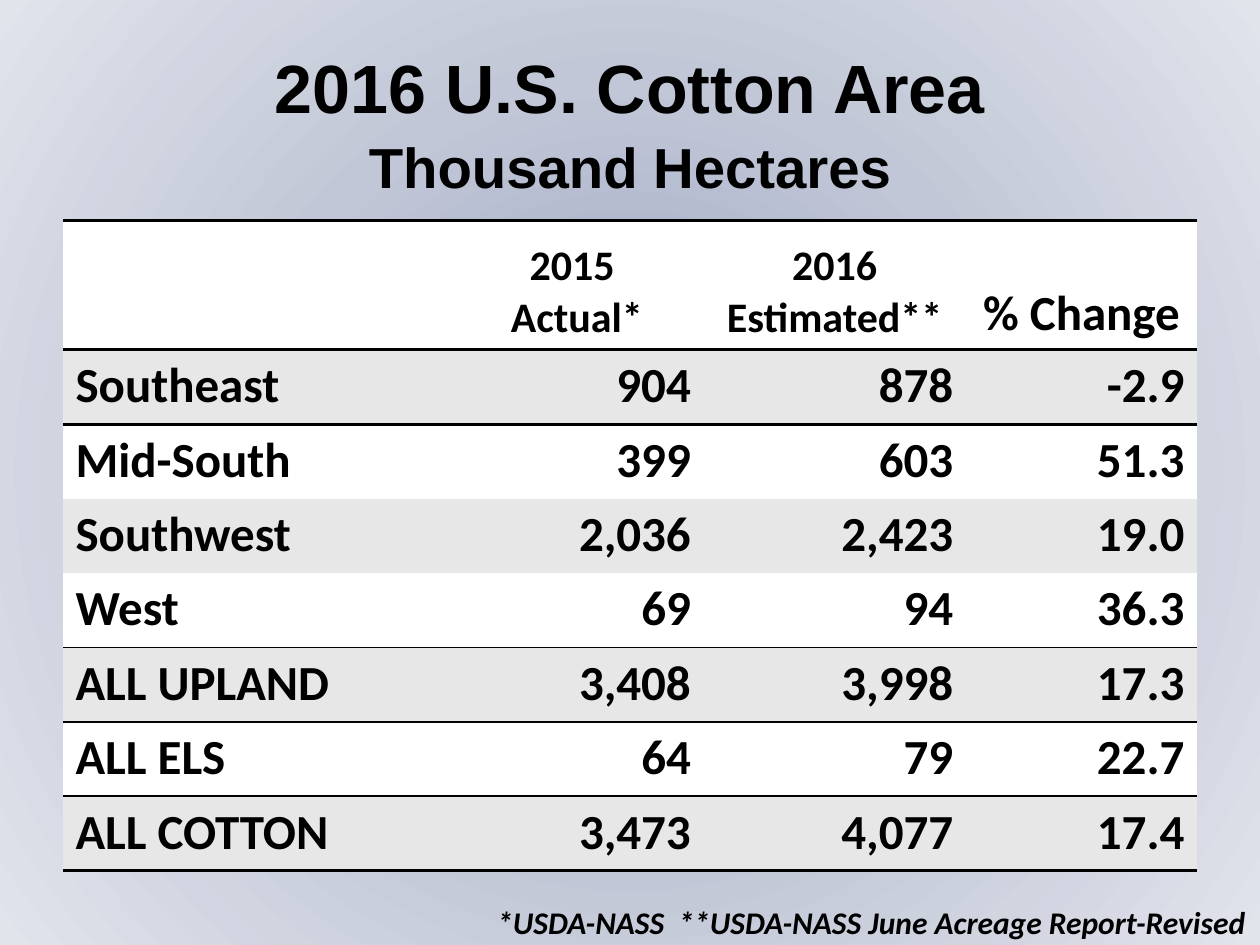
from lxml.etree import SubElement
from pptx import Presentation
from pptx.dml.color import RGBColor
from pptx.enum.text import MSO_ANCHOR, PP_ALIGN
from pptx.oxml.ns import qn
from pptx.util import Cm, Pt

BLACK = RGBColor(0x00, 0x00, 0x00)
WHITE = RGBColor(0xFF, 0xFF, 0xFF)
GREY = RGBColor(0xE7, 0xE7, 0xE7)
BACKGROUND = [
    (0, RGBColor(0x98, 0xA3, 0xC1)),
    (50, RGBColor(0xC2, 0xC7, 0xD7)),
    (100, RGBColor(0xE1, 0xE4, 0xEB)),
]
NO_STYLE = "{2D5ABB26-0587-4C30-8999-92F81FD0307C}"


def add_span(para, text, size, font="Calibri", italic=False):
    span = para.add_run()
    span.text = text
    span.font.name = font
    span.font.size = Pt(size)
    span.font.bold = True
    span.font.italic = italic
    span.font.color.rgb = BLACK


def add_border(cell, side, width):
    line = SubElement(cell._tc.get_or_add_tcPr(), qn(f"a:{side}"), w=str(Pt(width)))
    fill = SubElement(line, qn("a:solidFill"))
    SubElement(fill, qn("a:srgbClr"), val=str(BLACK))


deck = Presentation()
deck.slide_width = Cm(25.4)
deck.slide_height = Cm(19.05)
page = deck.slides.add_slide(deck.slide_layouts[5])

# Background: circular gradient from the centre
page.background.fill.gradient()
gradient = page.element.xpath(".//p:bg//a:gradFill")[0]
for child in list(gradient):
    gradient.remove(child)
stops = SubElement(gradient, qn("a:gsLst"))
for position, colour in BACKGROUND:
    stop = SubElement(stops, qn("a:gs"), pos=str(position * 1000))
    SubElement(stop, qn("a:srgbClr"), val=str(colour))
circle = SubElement(gradient, qn("a:path"), path="circle")
SubElement(circle, qn("a:fillToRect"), l="50000", t="50000", r="50000", b="50000")

# Title
title = page.shapes.title
title.left, title.top, title.width, title.height = Cm(1.27), Cm(0.76), Cm(22.86), Cm(3.18)
frame = title.text_frame
frame.vertical_anchor = MSO_ANCHOR.MIDDLE
frame.margin_top, frame.margin_bottom = Cm(0.24), Cm(0)
para = frame.paragraphs[0]
para.alignment = PP_ALIGN.CENTER
add_span(para, "2016 U.S. Cotton Area", 39, "Arial")
para = frame.add_paragraph()
para.alignment = PP_ALIGN.CENTER
para.space_before = Pt(3)
add_span(para, "Thousand Hectares", 32.2, "Arial")

# Table grid
header = [([], 24), (["2015", " Actual*"], 24), (["2016 Estimated**"], 24), (["% Change"], 28)]
body = [
    ("Southeast", "904", "878", "-2.9"),
    ("Mid-South", "399", "603", "51.3"),
    ("Southwest", "2,036", "2,423", "19.0"),
    ("West", "69", "94", "36.3"),
    ("ALL UPLAND", "3,408", "3,998", "17.3"),
    ("ALL ELS", "64", "79", "22.7"),
    ("ALL COTTON", "3,473", "4,077", "17.4"),
]
# Line widths keyed by the row they lie under; -1 is the top of the table
rules = {-1: 2, 0: 2, 4: 1, 6: 1, 7: 2}
table_frame = page.shapes.add_table(
    len(body) + 1, len(header), Cm(1.27), Cm(4.45), Cm(22.86), Cm(13.1)
)
table = table_frame.table
table.first_row = False
table.horz_banding = False
table._tbl.tblPr.find(qn("a:tableStyleId")).text = NO_STYLE
for column, width in zip(table.columns, (7.62, 5.29, 5.29, 4.66)):
    column.width = Cm(width)
for index, row in enumerate(table.rows):
    row.height = Cm(1.5 if index else 2.6)
    for cell in row.cells:
        for side, rule in (("lnT", index - 1), ("lnB", index)):
            if rule in rules:
                add_border(cell, side, rules[rule])
        cell.fill.solid()
        cell.fill.fore_color.rgb = GREY if index % 2 else WHITE

# Header row
for cell, (lines, size) in zip(table.rows[0].cells, header):
    cell.vertical_anchor = MSO_ANCHOR.BOTTOM
    for number, text in enumerate(lines):
        para = cell.text_frame.add_paragraph() if number else cell.text_frame.paragraphs[0]
        para.alignment = PP_ALIGN.CENTER
        add_span(para, text, size)

# Body rows
for index, values in enumerate(body, start=1):
    for column, text in enumerate(values):
        para = table.cell(index, column).text_frame.paragraphs[0]
        para.alignment = PP_ALIGN.RIGHT if column else PP_ALIGN.LEFT
        add_span(para, text, 28)

# Source note
box = page.shapes.add_textbox(Cm(9.63), Cm(18.08), Cm(15.88), Cm(1.02))
add_span(
    box.text_frame.paragraphs[0],
    " *USDA-NASS  **USDA-NASS June Acreage Report-Revised",
    18,
    italic=True,
)

deck.save("out.pptx")
